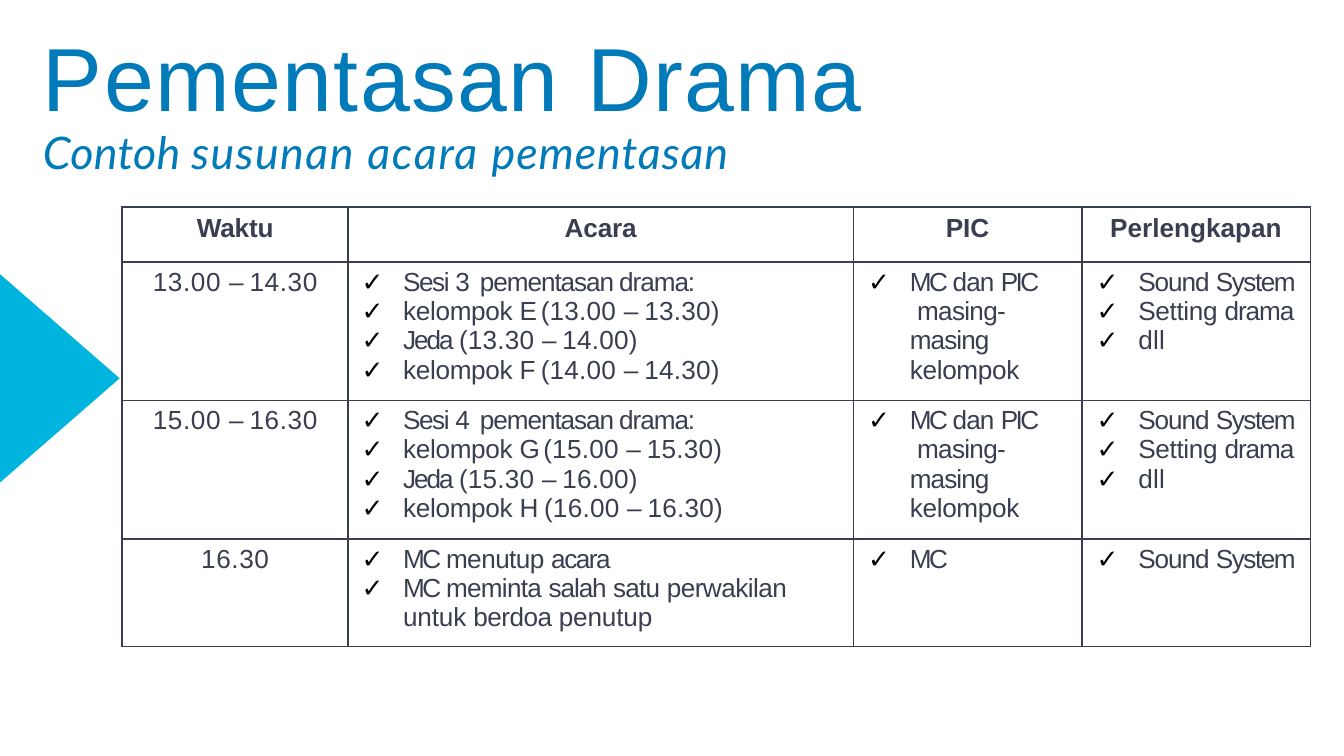
from lxml import etree
from pptx import Presentation
from pptx import util as u
from pptx.dml.color import RGBColor
from pptx.enum import text
from pptx.oxml import ns

BLUE, CYAN, INK = "007AB8", "00B5DD", "393E50"
COLS = [1.68, 3.76, 1.7, 1.7]
ROWS = [0.41, 1.03, 1.03, 0.8]
HEADER = ["Waktu", "Acara", "PIC", "Perlengkapan"]
PIC = ["MC dan PIC\n masing-\nmasing\nkelompok"]
TOOLS = ["Sound System", "Setting drama", "dll"]
SCHEDULE = [
    ("13.00 – 14.30",
     ["Sesi 3 pementasan drama:", "kelompok E (13.00 – 13.30)",
      "Jeda (13.30 – 14.00)", "kelompok F (14.00 – 14.30)"], PIC, TOOLS),
    ("15.00 – 16.30",
     ["Sesi 4 pementasan drama:", "kelompok G (15.00 – 15.30)",
      "Jeda (15.30 – 16.00)", "kelompok H (16.00 – 16.30)"], PIC, TOOLS),
    ("16.30",
     ["MC menutup acara",
      "MC meminta salah satu perwakilan\nuntuk berdoa penutup"],
     ["MC"], TOOLS[:1]),
]
TRACKING = {
    "": -1.4, "–": -0.8, "3": 0.7, "4": 0.7, "Sesi": -0.8, "pementasan": -0.6,
    "drama:": -0.6, "drama": -0.6, "kelompok": -0.2, "E": -1.9, "F": -1.1,
    "G": -2.1, "H": -0.9, "Jeda": -1.1, "MC": -1.4, "dan": -0.5, "PIC": -1.4,
    "masing-": -0.4, "masing": -0.5, "Sound": -0.6, "System": -0.8,
    "Setting": -0.2, "menutup": -0.3, "acara": -0.8, "meminta": -0.4,
    "salah": -0.6, "satu": -0.4, "perwakilan": -0.3, "untuk": -0.1,
    "berdoa": -0.3, "penutup": -0.1,
}


def rgb(value):
    """Turn a hex string into a colour."""
    return RGBColor.from_string(value)


def add_run(p, words, size, face, color, spacing=0, bold=False, italic=False):
    """Add a run with its font and letter spacing."""
    r = p.add_run()
    r.text = words
    r.font.size, r.font.name = u.Pt(size), face
    r.font.bold, r.font.italic = bold, italic
    r.font.color.rgb = rgb(color)
    r.font._element.set("spc", str(round(spacing * 100)))


def word_spacing(word):
    """Give the letter spacing of a word in the table."""
    default = 0.3 if word[:1].isdigit() and not word.endswith(")") else 0.1
    return TRACKING.get(word, default)


def add_words(p, content):
    """Write lines word by word, each with its own spacing."""
    for i, line in enumerate(content.split("\n")):
        if i:
            p.add_line_break()
        words = line.split(" ")
        for j, word in enumerate(words):
            gap = " " if j < len(words) - 1 else ""
            add_run(p, word + gap, 14, "Arial", INK, word_spacing(word))


def add_check(p, indent):
    """Give a paragraph a hanging check mark."""
    pPr = p._p.get_or_add_pPr()
    pPr.set("marL", str(u.Inches(indent)))
    pPr.set("indent", str(u.Inches(-0.31)))
    clr = etree.SubElement(pPr, ns.qn("a:buClr"))
    etree.SubElement(clr, ns.qn("a:srgbClr"), val="000000")
    etree.SubElement(pPr, ns.qn("a:buFont"), typeface="Arial")
    etree.SubElement(pPr, ns.qn("a:buChar"), char="✓")


def style_cell(cell, top):
    """Set the margins, borders and empty fill of a cell."""
    cell.margin_left = cell.margin_right = cell.margin_bottom = 0
    cell.margin_top = u.Inches(top)
    tcPr = cell._tc.get_or_add_tcPr()
    for side in ("lnL", "lnR", "lnT", "lnB"):
        ln = etree.SubElement(tcPr, ns.qn("a:" + side), w=str(u.Pt(1)))
        fill = etree.SubElement(ln, ns.qn("a:solidFill"))
        etree.SubElement(fill, ns.qn("a:srgbClr"), val=INK)
    cell.fill.background()


def add_heading(s, x, y, w, h):
    """Place the title and subtitle."""
    tf = s.shapes.add_textbox(*map(u.Inches, (x, y, w, h))).text_frame
    tf.word_wrap = True
    tf.margin_left = tf.margin_right = tf.margin_bottom = 0
    tf.margin_top = u.Inches(0.02)
    lines = [
        (55, 48, "Arial", False, [("Pementasan ", 0.8), ("Drama", 0.7)]),
        (26.2, 24, "Lato", True, [("Contoh ", 0.1), ("susunan ", 0.8),
                                  ("acara ", 1), ("pementasan", 0.5)]),
    ]
    for i, (leading, size, face, italic, words) in enumerate(lines):
        p = tf.add_paragraph() if i else tf.paragraphs[0]
        p.line_spacing = u.Pt(leading)
        p._p.get_or_add_pPr().set("marL", str(u.Inches(0.01)))
        for word, spacing in words:
            add_run(p, word, size, face, BLUE, spacing, italic=italic)


def add_arrow(s, x, y, w, h):
    """Place the triangle at the left edge."""
    points = [(x, y + h), (x + w, y + h / 2)]
    builder = s.shapes.build_freeform(u.Inches(x), u.Inches(y))
    builder.add_line_segments([(u.Inches(a), u.Inches(b)) for a, b in points])
    sp = builder.convert_to_shape()
    sp.shadow.inherit = False
    sp.fill.solid()
    sp.fill.fore_color.rgb = rgb(CYAN)
    sp.line.fill.background()


def add_schedule(s, x, y):
    """Place the schedule table."""
    box = map(u.Inches, (x, y, sum(COLS), sum(ROWS)))
    table = s.shapes.add_table(len(ROWS), len(COLS), *box).table
    table.first_row = table.horz_banding = False
    for col, width in zip(table.columns, COLS):
        col.width = u.Inches(width)
    for row, height in zip(table.rows, ROWS):
        row.height = u.Inches(height)
    for cell, label in zip(table.rows[0].cells, HEADER):
        style_cell(cell, 0.05)
        p = cell.text_frame.paragraphs[0]
        p.alignment = text.PP_ALIGN.CENTER
        spacing = 0 if label == "Perlengkapan" else -0.1
        add_run(p, label, 14, "Arial", INK, spacing, bold=True)
    for i, (time, *lists) in enumerate(SCHEDULE, 1):
        cell = table.cell(i, 0)
        style_cell(cell, 0.04)
        p = cell.text_frame.paragraphs[0]
        p.alignment = text.PP_ALIGN.CENTER
        add_words(p, time)
        for j, items in enumerate(lists, 1):
            cell = table.cell(i, j)
            style_cell(cell, 0.04)
            tf = cell.text_frame
            for k, item in enumerate(items):
                p = tf.add_paragraph() if k else tf.paragraphs[0]
                add_check(p, 0.41 if j == 1 else 0.42)
                add_words(p, item)


def main():
    """Build the slide and save it."""
    prs = Presentation()
    prs.slide_width, prs.slide_height = u.Inches(10), u.Inches(10 * 9 / 16)
    s = prs.slides.add_slide(prs.slide_layouts[6])
    add_arrow(s, 0, 2.04, 0.89, 1.55)
    add_heading(s, 0.31, 0.18, 6.11, 1.16)
    add_schedule(s, 0.91, 1.54)
    prs.save("out.pptx")


if __name__ == "__main__":
    main()
